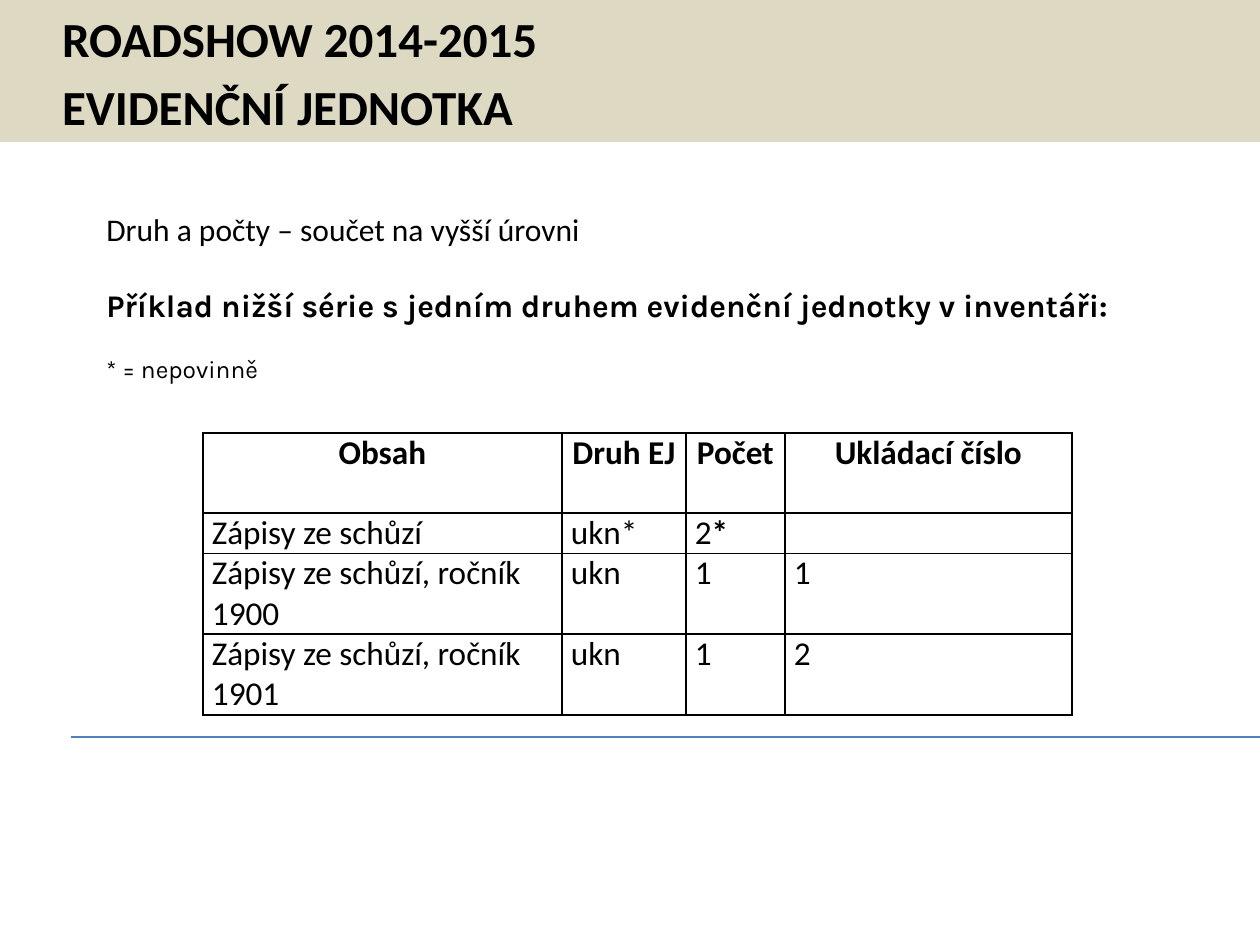
from dataclasses import dataclass

import pptx
import pptx.dml.color
import pptx.enum.shapes
import pptx.enum.text
import pptx.oxml
import pptx.oxml.ns
import pptx.util

RGBColor = pptx.dml.color.RGBColor
BLACK = RGBColor(0x00, 0x00, 0x00)
BAND = RGBColor(0xDD, 0xD9, 0xC3)
RULE = RGBColor(0x4F, 0x81, 0xBD)
BODY_FONT = "Calibri"
ACCENT_FONT = "Karla"
PX_PER_INCH = 126
ALIGN = pptx.enum.text.PP_ALIGN


@dataclass
class Line:
    text: str
    font: str
    size: int
    bold: bool = False
    space_before: float = 0


TITLE = [
    Line("ROADSHOW 2014-2015", BODY_FONT, 28, True),
    Line("EVIDENČNÍ JEDNOTKA", BODY_FONT, 28, True, 5.6),
]
INTRO = [
    Line("Druh a počty – součet na vyšší úrovni", BODY_FONT, 18),
    Line("Příklad nižší série s jedním druhem evidenční jednotky v inventáři:",
         ACCENT_FONT, 18, True, 22),
    Line("* = nepovinně", ACCENT_FONT, 14, False, 17),
]
COLUMN_WIDTHS = [359, 124, 99, 287]
ROW_HEIGHTS = [80, 40, 80, 80]
# Each cell is a list of runs
INVENTORY = [
    [["Obsah"], ["Druh EJ"], ["Počet"], ["Ukládací číslo"]],
    [["Zápisy ze schůzí"], ["ukn*"], ["2", "*"], []],
    [["Zápisy ze schůzí, ročník 1900"], ["ukn"], ["1"], ["1"]],
    [["Zápisy ze schůzí, ročník 1901"], ["ukn"], ["1"], ["2"]],
]


def px(length: int) -> int:
    return pptx.util.Emu(round(length * 914400 / PX_PER_INCH))


def style_font(font, name: str, size: int, bold: bool) -> None:
    font.name = name
    font.size = pptx.util.Pt(size)
    font.bold = bold
    font.color.rgb = BLACK


def write_lines(frame, lines: list[Line]) -> None:
    frame.word_wrap = True
    frame.auto_size = pptx.enum.text.MSO_AUTO_SIZE.NONE
    frame.text = "\n".join(line.text for line in lines)
    for para, line in zip(frame.paragraphs, lines):
        para.alignment = ALIGN.LEFT
        para.space_before = pptx.util.Pt(line.space_before)
        for span in para.runs:
            style_font(span.font, line.font, line.size, line.bold)


def add_borders(cell) -> None:
    properties = cell._tc.get_or_add_tcPr()
    for position, side in enumerate(("lnL", "lnR", "lnT", "lnB")):
        border = pptx.oxml.parse_xml(
            f'<a:{side} {pptx.oxml.ns.nsdecls("a")} w="12700"><a:solidFill>'
            f'<a:srgbClr val="{BLACK}"/></a:solidFill></a:{side}>')
        properties.insert(position, border)


def fill_cell(cell, spans: list[str], header: bool) -> None:
    cell.margin_left = cell.margin_right = px(9)
    cell.margin_top = cell.margin_bottom = 0
    cell.fill.background()
    add_borders(cell)
    para = cell.text_frame.paragraphs[0]
    para.alignment = ALIGN.CENTER if header else ALIGN.LEFT
    style_font(para.font, BODY_FONT, 19, header)
    for index, text in enumerate(spans):
        span = para.add_run()
        span.text = text
        style_font(span.font, BODY_FONT, 19, header or index > 0)


def add_inventory(slide) -> None:
    table = slide.shapes.add_table(
        len(ROW_HEIGHTS), len(COLUMN_WIDTHS), px(203), px(433),
        px(sum(COLUMN_WIDTHS)), px(sum(ROW_HEIGHTS))).table
    table.first_row = False
    table.horz_banding = False
    for column, width in zip(table.columns, COLUMN_WIDTHS):
        column.width = px(width)
    for row_index, (row, height) in enumerate(zip(table.rows, ROW_HEIGHTS)):
        row.height = px(height)
        for cell, spans in zip(row.cells, INVENTORY[row_index]):
            fill_cell(cell, spans, header=row_index == 0)


def add_rule(slide) -> None:
    rule = slide.shapes.add_connector(
        pptx.enum.shapes.MSO_CONNECTOR.STRAIGHT, px(71), px(737), px(1260), px(737))
    rule.line.color.rgb = RULE
    rule.line.width = pptx.util.Pt(0.75)
    rule._element.spPr.append(
        pptx.oxml.parse_xml(f'<a:effectLst {pptx.oxml.ns.nsdecls("a")}/>'))


def main() -> None:
    deck = pptx.Presentation()
    deck.slide_width, deck.slide_height = px(1260), px(945)
    slide = deck.slides.add_slide(deck.slide_layouts[5])

    # Title band
    title = slide.shapes.title
    title.left, title.top, title.width, title.height = px(0), px(-1), px(1260), px(143)
    title.fill.solid()
    title.fill.fore_color.rgb = BAND
    write_lines(title.text_frame, TITLE)
    title.text_frame.margin_left = px(62)
    title.text_frame.vertical_anchor = pptx.enum.text.MSO_ANCHOR.BOTTOM

    # Footer rule
    add_rule(slide)

    # Introduction
    box = slide.shapes.add_textbox(px(94), px(204), px(1072), px(186))
    write_lines(box.text_frame, INTRO)

    # Inventory table
    add_inventory(slide)

    deck.save("out.pptx")


if __name__ == "__main__":
    main()
